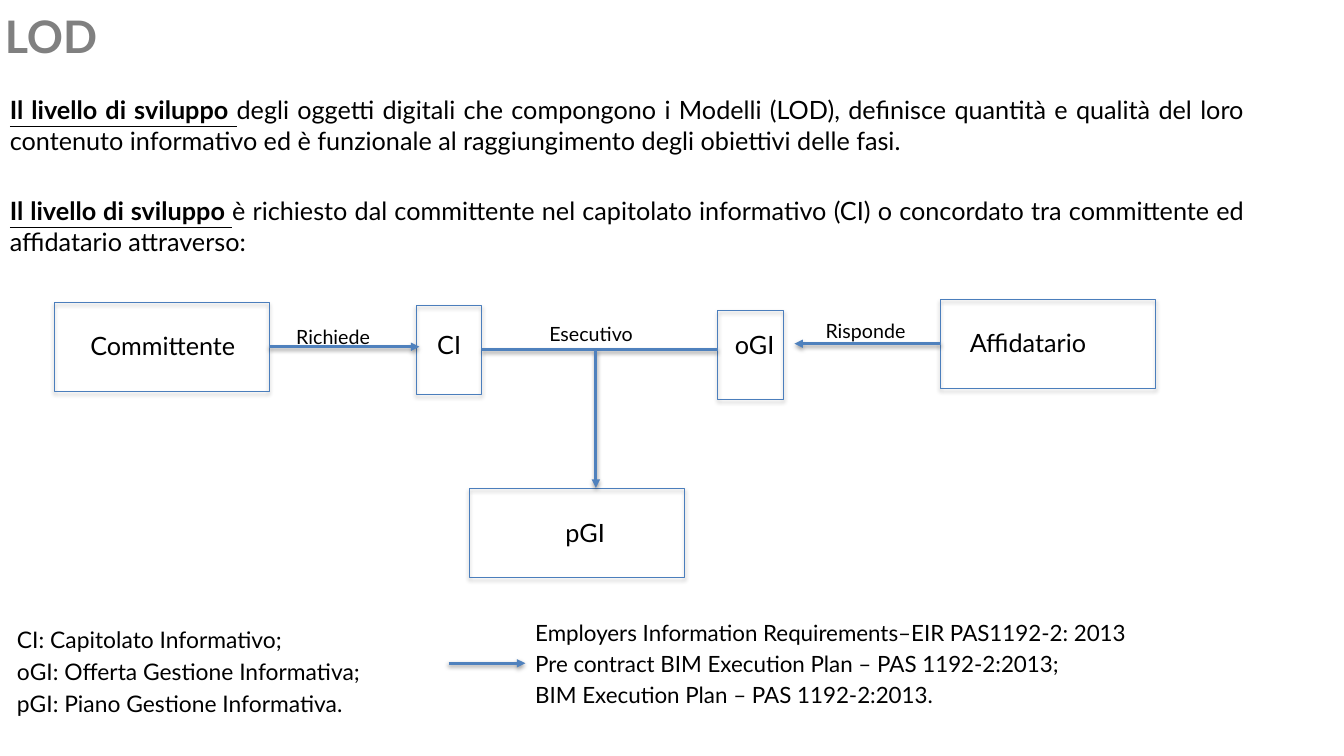
from lxml import etree
from pptx import Presentation
from pptx.dml.color import RGBColor
from pptx.enum.shapes import MSO_CONNECTOR as Connector, MSO_SHAPE as Shape
from pptx.enum.text import PP_ALIGN as Align
from pptx.oxml.ns import qn
from pptx.util import Inches, Pt

COLORS = {"text": "000000", "title": "808080", "outline": "4B7EBC",
          "arrow": "4F81BD", "shadow": "000000"}
FONT = "Lato"
CELL = Inches(0.1)  # grid of 133.3 columns by 75 rows
RIGHT, LEFT = 3, 1  # connection sites of a rectangle


def cells(*counts):
    return [round(count * CELL) for count in counts]


def color(name):
    return RGBColor.from_string(COLORS[name])


def add_shadow(part, distance, opacity):
    """Soft shadow straight below a box or a line."""
    properties = part._element.spPr
    for old in properties.findall(qn("a:effectLst")):
        properties.remove(old)
    effects = etree.SubElement(properties, qn("a:effectLst"))
    shadow = etree.SubElement(effects, qn("a:outerShdw"), blurRad=str(Pt(3.1)),
                              dist=str(Pt(distance)), dir="5400000", rotWithShape="0")
    tone = etree.SubElement(shadow, qn("a:srgbClr"), val=COLORS["shadow"])
    etree.SubElement(tone, qn("a:alpha"), val=str(opacity * 1000))


def add_text(slide, box, paragraphs, size, align=Align.LEFT, gap=0, tone="text", bold=None):
    """Each paragraph is a string, or a pair of underlined lead and remainder."""
    frame = slide.shapes.add_textbox(*cells(*box)).text_frame
    frame.word_wrap = True
    for index, content in enumerate(paragraphs):
        paragraph = frame.paragraphs[0] if index == 0 else frame.add_paragraph()
        paragraph.alignment = align
        if index:
            paragraph.space_before = Pt(gap)
        font = paragraph.font
        font.name, font.size, font.bold = FONT, Pt(size), bold
        font.color.rgb = color(tone)
        lead, rest = ("", content) if isinstance(content, str) else content
        if lead:
            run = paragraph.add_run()
            run.text = lead
            run.font.bold = run.font.underline = True
        paragraph.add_run().text = rest


def add_line(slide, start, end, arrow=True, source=None, site=RIGHT):
    line = slide.shapes.add_connector(Connector.STRAIGHT, *cells(*start, *end))
    if source is not None:
        line.begin_connect(source, site)
    line.line.color.rgb = color("arrow")
    line.line.width = Pt(2)
    if arrow:
        etree.SubElement(line.line._get_or_add_ln(), qn("a:tailEnd"), type="triangle")
    add_shadow(line, 1.6, 38)


def add_node(slide, box):
    node = slide.shapes.add_shape(Shape.RECTANGLE, *cells(*box))
    node.fill.background()
    node.line.color.rgb = color("outline")
    node.line.width = Pt(0.75)
    add_shadow(node, 1.8, 35)
    return node


def build_heading(slide, box):
    add_text(slide, box, ["LOD"], 32, tone="title", bold=True)


def build_definition(slide, box):
    lead = "Il livello di sviluppo "
    add_text(slide, box, [
        (lead, "degli oggetti digitali che compongono i Modelli (LOD), definisce quantità "
               "e qualità del loro contenuto informativo ed è funzionale al raggiungimento "
               "degli obiettivi delle fasi."),
        (lead, "è richiesto dal committente nel capitolato informativo (CI) o concordato "
               "tra committente ed affidatario attraverso:"),
    ], 18, Align.JUSTIFY, gap=29)


def build_flow(slide, box):
    left, top = box[:2]

    def at(x, y):
        return left + x, top + y

    # Boxes and their captions: name, corner, width, caption corner and width
    height, caption_height = 8.8, 7.8
    nodes = {}
    for name, corner, width, caption, caption_width, align in [
        ("Committente", (5.4, 0.3), 21.3, (1.6, 2.6), 29.1, Align.CENTER),
        ("CI", (41.3, 0.6), 6.5, (30, 2.5), 29.1, Align.CENTER),
        ("oGI", (71.2, 1.1), 6.5, (60.3, 2.5), 29.1, Align.CENTER),
        ("Affidatario", (93.3, 0), 21.3, (95.2, 2.3), 19.4, Align.JUSTIFY),
        ("pGI", (46.6, 18.8), 21.3, (55.1, 21.1), 19.4, Align.JUSTIFY),
    ]:
        nodes[name] = add_node(slide, (*at(*corner), width, height))
        add_text(slide, (*at(*caption), caption_width, caption_height), [name], 18, align)

    # Links between the boxes
    add_line(slide, at(26.7, 4.7), at(41.6, 4.7), source=nodes["Committente"])
    add_line(slide, at(93.3, 4.4), at(78.8, 4.4), source=nodes["Affidatario"], site=LEFT)
    add_line(slide, at(47.8, 5), at(71.2, 5), arrow=False, source=nodes["CI"])
    add_line(slide, at(59.1, 5), at(59.1, 18.7))

    # Link labels
    for label, corner in [("Richiede", (28.4, 2)), ("Esecutivo", (53.5, 1.7)),
                          ("Risponde", (80.9, 1.4))]:
        add_text(slide, (*at(*corner), 19.4, caption_height), [label], 14, Align.JUSTIFY)


def build_legend(slide, box):
    left, top, width, height = box
    add_text(slide, (left, top + 0.7, 45.9, height), [
        "CI: Capitolato Informativo;",
        "oGI: Offerta Gestione Informativa;",
        "pGI: Piano Gestione Informativa.",
    ], 16.3, gap=3.26)
    standards = left + 51.4
    add_line(slide, (standards - 7.6, top + 4.9), (standards, top + 4.9))
    add_text(slide, (standards, top, width - 51.4, height), [
        "Employers Information Requirements–EIR PAS1192-2: 2013",
        "Pre contract BIM Execution Plan – PAS 1192-2:2013;",
        "BIM Execution Plan – PAS 1192-2:2013.",
    ], 16, gap=3.2)


def main():
    deck = Presentation()
    deck.slide_width, deck.slide_height = Inches(13.33), Inches(7.5)
    slide = deck.slides.add_slide(deck.slide_layouts[6])
    build_heading(slide, (-0.5, 0.4, 108.4, 6.4))
    build_definition(slide, (0, 8.9, 124.4, 24.7))
    build_flow(slide, (0, 29.7, 114.6, 27.6))
    build_legend(slide, (0.7, 60.9, 129.2, 12.8))
    deck.save("out.pptx")


if __name__ == "__main__":
    main()
